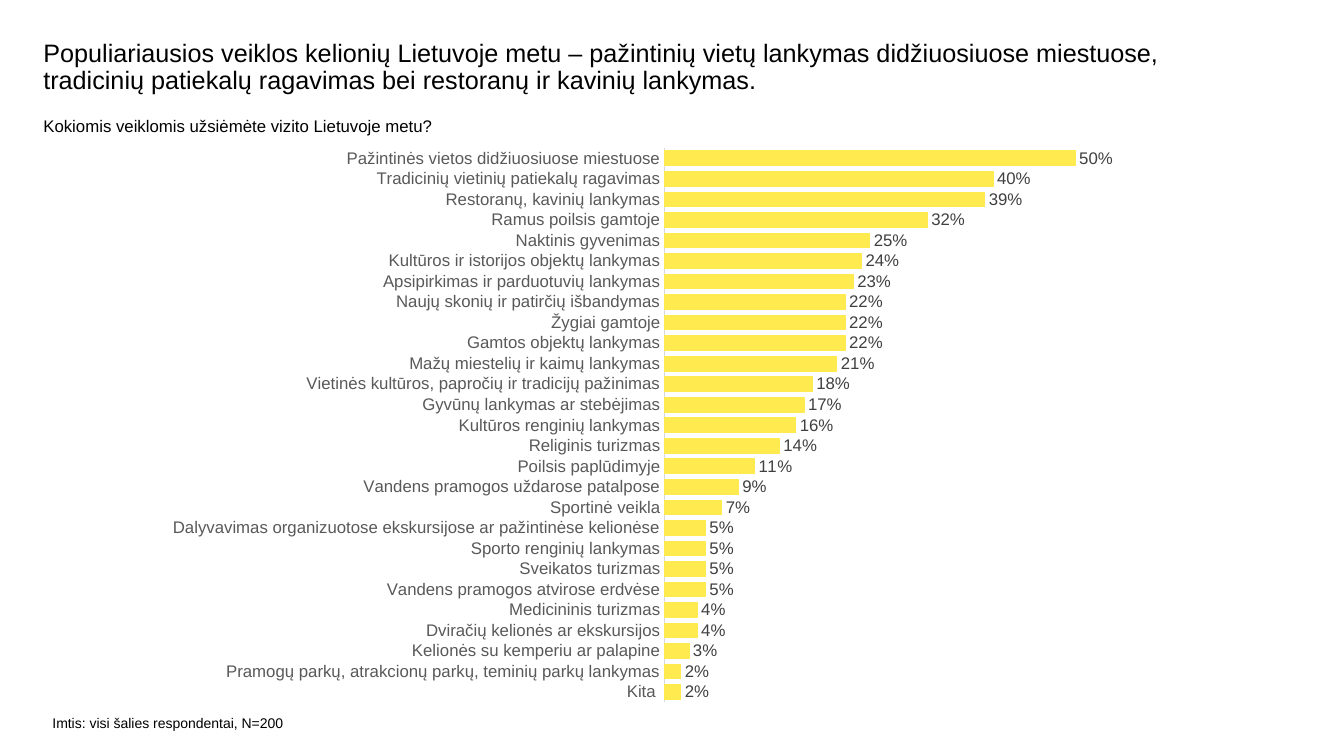
from lxml import etree
from pptx import Presentation
from pptx.chart.data import CategoryChartData
from pptx.dml.color import RGBColor
from pptx.enum.chart import XL_CHART_TYPE, XL_LABEL_POSITION, XL_TICK_MARK
from pptx.enum.text import MSO_ANCHOR
from pptx.oxml.ns import qn
from pptx.util import Inches, Pt

BAR = XL_CHART_TYPE.BAR_CLUSTERED
OUTSIDE_END = XL_LABEL_POSITION.OUTSIDE_END
NO_TICK = XL_TICK_MARK.NONE
TOP = MSO_ANCHOR.TOP

BLACK = RGBColor(0x00, 0x00, 0x00)
DARK_GRAY = RGBColor(0x40, 0x40, 0x40)
GRAY = RGBColor(0x59, 0x59, 0x59)
LIGHT_GRAY = RGBColor(0xD9, 0xD9, 0xD9)
YELLOW = RGBColor(0xFF, 0xEB, 0x50)

ACTIVITIES = [
    ("Pažintinės vietos didžiuosiuose miestuose", 0.50),
    ("Tradicinių vietinių patiekalų ragavimas", 0.40),
    ("Restoranų, kavinių lankymas", 0.39),
    ("Ramus poilsis gamtoje", 0.32),
    ("Naktinis gyvenimas", 0.25),
    ("Kultūros ir istorijos objektų lankymas", 0.24),
    ("Apsipirkimas ir parduotuvių lankymas", 0.23),
    ("Naujų skonių ir patirčių išbandymas", 0.22),
    ("Žygiai gamtoje", 0.22),
    ("Gamtos objektų lankymas", 0.22),
    ("Mažų miestelių ir kaimų lankymas", 0.21),
    ("Vietinės kultūros, papročių ir tradicijų pažinimas", 0.18),
    ("Gyvūnų lankymas ar stebėjimas", 0.17),
    ("Kultūros renginių lankymas", 0.16),
    ("Religinis turizmas", 0.14),
    ("Poilsis paplūdimyje", 0.11),
    ("Vandens pramogos uždarose patalpose", 0.09),
    ("Sportinė veikla", 0.07),
    ("Dalyvavimas organizuotose ekskursijose ar pažintinėse kelionėse", 0.05),
    ("Sporto renginių lankymas", 0.05),
    ("Sveikatos turizmas", 0.05),
    ("Vandens pramogos atvirose erdvėse", 0.05),
    ("Medicininis turizmas", 0.04),
    ("Dviračių kelionės ar ekskursijos", 0.04),
    ("Kelionės su kemperiu ar palapine", 0.03),
    ("Pramogų parkų, atrakcionų parkų, teminių parkų lankymas", 0.02),
    ("Kita ", 0.02),
]


class SlideBuilder:
    font_name = "Arial"

    def __init__(self, slide):
        self.slide = slide

    def style(self, font, size, color):
        font.name = self.font_name
        font.size = Pt(size)
        font.color.rgb = color

    def text(self, box, text, size, line_spacing=None):
        sp = self.slide.shapes.add_textbox(*map(Inches, box))
        tf = sp.text_frame
        tf.word_wrap = True
        tf.vertical_anchor = TOP
        tf.margin_left = tf.margin_top = tf.margin_right = tf.margin_bottom = 0
        p = tf.paragraphs[0]
        if line_spacing:
            p.line_spacing = line_spacing
        r = p.add_run()
        r.text = text
        self.style(r.font, size, BLACK)

    def bar_chart(self, box, rows, plot_box):
        data = CategoryChartData(number_format="0%")
        data.categories = [name for name, _ in reversed(rows)]
        data.add_series("Series 1", [share for _, share in reversed(rows)])
        chart = self.slide.shapes.add_chart(BAR, *map(Inches, box), data).chart
        chart.has_legend = False
        chart.has_title = False
        self.style(chart.font, 10, BLACK)

        cat = chart.category_axis
        cat.major_tick_mark = cat.minor_tick_mark = NO_TICK
        cat.has_major_gridlines = False
        cat.format.line.color.rgb = LIGHT_GRAY
        cat.format.line.width = Pt(0.75)
        self.style(cat.tick_labels.font, 12, GRAY)

        val = chart.value_axis
        val.minimum_scale, val.maximum_scale = 0, 0.6
        val.has_major_gridlines = False
        val.visible = False

        plot = chart.plots[0]
        plot.gap_width = 40
        plot.vary_by_categories = False
        plot.has_data_labels = True
        labels = plot.data_labels
        labels.show_value = True
        labels.position = OUTSIDE_END
        labels.number_format = "0%"
        labels.number_format_is_linked = False
        self.style(labels.font, 12, DARK_GRAY)

        fmt = plot.series[0].format
        fmt.fill.solid()
        fmt.fill.fore_color.rgb = YELLOW
        fmt.line.color.rgb = YELLOW
        fmt.line.width = Pt(0.75)
        self.place_plot(chart, box, plot_box)

    def place_plot(self, chart, box, plot_box):
        left, top, width, height = box
        x, y, w, h = plot_box
        area = chart.element.find(".//" + qn("c:plotArea"))
        for old in area.findall(qn("c:layout")):
            area.remove(old)
        layout = etree.Element(qn("c:layout"))
        area.insert(0, layout)
        manual = etree.SubElement(layout, qn("c:manualLayout"))
        settings = [
            ("layoutTarget", "inner"), ("xMode", "edge"), ("yMode", "edge"),
            ("x", (x - left) / width), ("y", (y - top) / height),
            ("w", w / width), ("h", h / height),
        ]
        for tag, value in settings:
            etree.SubElement(manual, qn("c:" + tag)).set("val", str(value))


def main():
    prs = Presentation()
    prs.slide_width, prs.slide_height = Inches(13.33), Inches(7.5)
    s = SlideBuilder(prs.slides.add_slide(prs.slide_layouts[6]))
    s.text((0.43, 0.4, 11.25, 0.6),
           "Populiariausios veiklos kelionių Lietuvoje metu – pažintinių vietų "
           "lankymas didžiuosiuose miestuose, tradicinių patiekalų ragavimas "
           "bei restoranų ir kavinių lankymas.", 18, 0.9)
    s.text((0.43, 1.15, 11.89, 0.61),
           "Kokiomis veiklomis užsiėmėte vizito Lietuvoje metu?", 12)
    s.bar_chart((1.52, 1.36, 10.17, 5.73), ACTIVITIES, (6.59, 1.47, 4.89, 5.5))
    s.text((0.52, 7.09, 2.53, 0.24), "Imtis: visi šalies respondentai, N=200", 10)
    prs.save("out.pptx")


if __name__ == "__main__":
    main()
